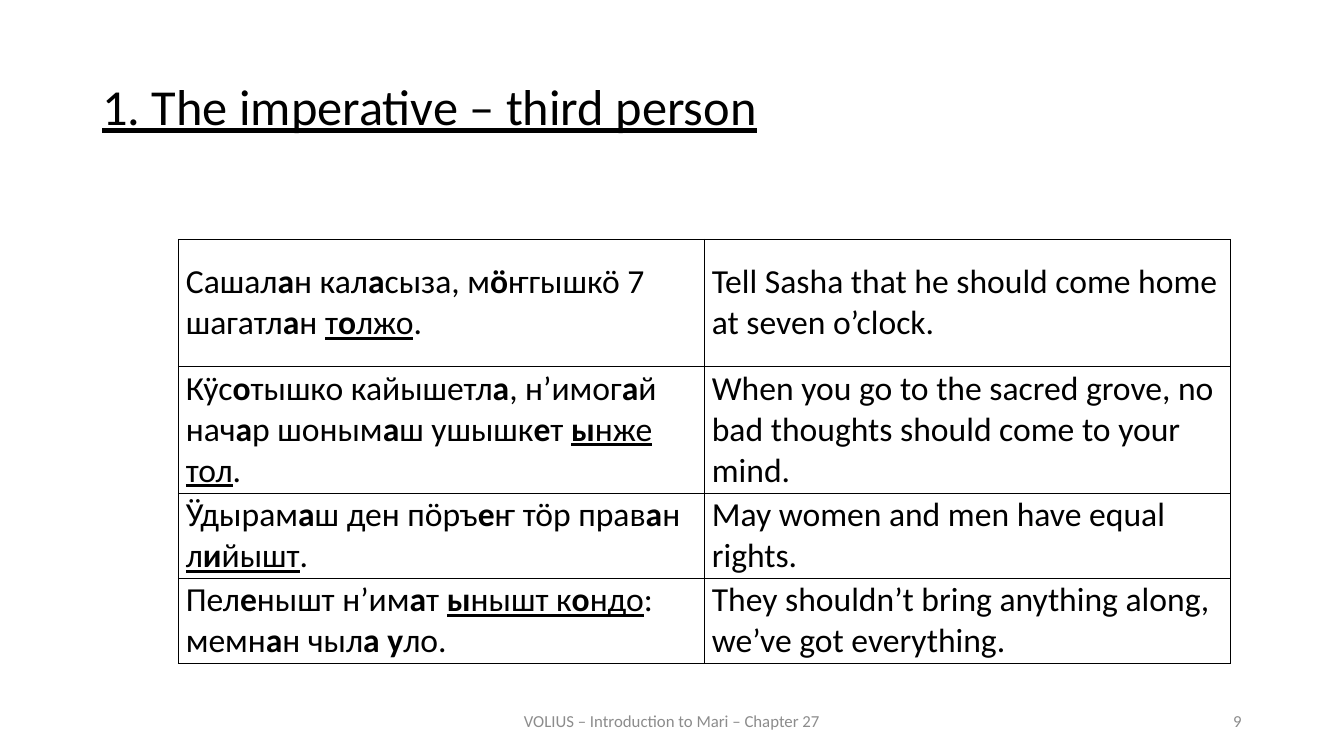
from dataclasses import dataclass

from lxml import etree
from pptx import Presentation
from pptx.dml.color import RGBColor
from pptx.enum.text import MSO_ANCHOR, PP_ALIGN
from pptx.oxml.ns import qn
from pptx.util import Emu, Pt

LEFT, CENTER = PP_ALIGN.LEFT, PP_ALIGN.CENTER
RIGHT, JUSTIFY = PP_ALIGN.RIGHT, PP_ALIGN.JUSTIFY
TOP, MIDDLE = MSO_ANCHOR.TOP, MSO_ANCHOR.MIDDLE

EMU_PER_PX = 9525
FONT = "Calibri"
BLACK = "000000"
GREY = "8C8C8C"
BOLD_MARK, UNDERLINE_MARK = "*", "_"


@dataclass(frozen=True)
class Label:
    text: str
    left: int
    top: int
    width: int
    height: int
    size: int
    color: str
    align: PP_ALIGN
    anchor: MSO_ANCHOR = MIDDLE
    line_spacing: float = 1.0
    space_before: int = 0


@dataclass(frozen=True)
class Example:
    mari: str
    english: str
    height: int


LABELS = [
    Label("_1. The imperative – third person_", 88, 73, 1104, 80, 36, BLACK,
          JUSTIFY, TOP, 0.9, 12),
    Label("VOLIUS – Introduction to Mari – Chapter 27", 424, 667, 432, 38, 12,
          GREY, CENTER),
    Label("9", 904, 667, 288, 38, 12, GREY, RIGHT),
]

EXAMPLES = [
    Example("Сашал*а*н кал*а*сыза, м*ӧ*ҥгышкӧ 7 шагатл*а*н _т*о*лжо_.",
            "Tell Sasha that he should come home at seven o’clock.", 121),
    Example("Кӱс*о*тышко кайышетл*а*, н’имог*а*й нач*а*р шоным*а*ш "
            "ушышк*е*т _*ы*нже тол_.",
            "When you go to the sacred grove, no bad thoughts should come "
            "to your mind.", 121),
    Example("Ӱдырам*а*ш ден пӧръ*е*ҥ тӧр прав*а*н _л*и*йышт_.",
            "May women and men have equal rights.", 81),
    Example("Пел*е*нышт н’им*а*т _*ы*нышт к*о*ндо_: мемн*а*н чыл*а у*ло.",
            "They shouldn’t bring anything along, we’ve got everything.", 81),
]
TABLE_LEFT, TABLE_TOP, COLUMN_WIDTH = 170, 228, 501
CELL_MARGIN = 7


def px(value: int) -> Emu:
    return Emu(value * EMU_PER_PX)


def rgb(color: str) -> RGBColor:
    return RGBColor.from_string(color)


def add_marked_text(paragraph, marked: str, size: int, color: str) -> None:
    """Add runs; * switches bold and _ switches underline."""
    underline = False
    for underlined_part in marked.split(UNDERLINE_MARK):
        bold = False
        for text in underlined_part.split(BOLD_MARK):
            if text:
                run = paragraph.add_run()
                run.text = text
                run.font.name = FONT
                run.font.size = Pt(size)
                run.font.color.rgb = rgb(color)
                run.font.bold = bold
                run.font.underline = underline
            bold = not bold
        underline = not underline


def add_label(slide, label: Label) -> None:
    shape = slide.shapes.add_textbox(px(label.left), px(label.top),
                                     px(label.width), px(label.height))
    text_frame = shape.text_frame
    text_frame.word_wrap = True
    text_frame.vertical_anchor = label.anchor
    paragraph = text_frame.paragraphs[0]
    paragraph.alignment = label.align
    paragraph.line_spacing = label.line_spacing
    paragraph.space_before = Pt(label.space_before)
    add_marked_text(paragraph, label.text, label.size, label.color)


def add_borders(cell) -> None:
    properties = cell._tc.get_or_add_tcPr()
    for side in ("a:lnL", "a:lnR", "a:lnT", "a:lnB"):
        line = etree.SubElement(properties, qn(side), w=str(Pt(1)))
        fill = etree.SubElement(line, qn("a:solidFill"))
        etree.SubElement(fill, qn("a:srgbClr"), val=BLACK)


def fill_cell(cell, marked: str) -> None:
    cell.margin_left = cell.margin_right = px(CELL_MARGIN)
    cell.margin_top = cell.margin_bottom = 0
    cell.vertical_anchor = MIDDLE
    add_borders(cell)
    cell.fill.background()
    paragraph = cell.text_frame.paragraphs[0]
    paragraph.alignment = LEFT
    add_marked_text(paragraph, marked, 24, BLACK)


def add_examples(slide, examples: list[Example]) -> None:
    total_height = sum(example.height for example in examples)
    table = slide.shapes.add_table(
        len(examples), 2, px(TABLE_LEFT), px(TABLE_TOP),
        px(2 * COLUMN_WIDTH), px(total_height)).table
    table.first_row = False
    table.horz_banding = False
    for column in table.columns:
        column.width = px(COLUMN_WIDTH)
    for row, example in zip(table.rows, examples):
        row.height = px(example.height)
        for cell, marked in zip(row.cells, (example.mari, example.english)):
            fill_cell(cell, marked)


def main() -> None:
    presentation = Presentation()
    presentation.slide_width = px(1280)
    presentation.slide_height = px(720)
    slide = presentation.slides.add_slide(presentation.slide_layouts[6])
    for label in LABELS:
        add_label(slide, label)
    add_examples(slide, EXAMPLES)
    presentation.save("out.pptx")


if __name__ == "__main__":
    main()
